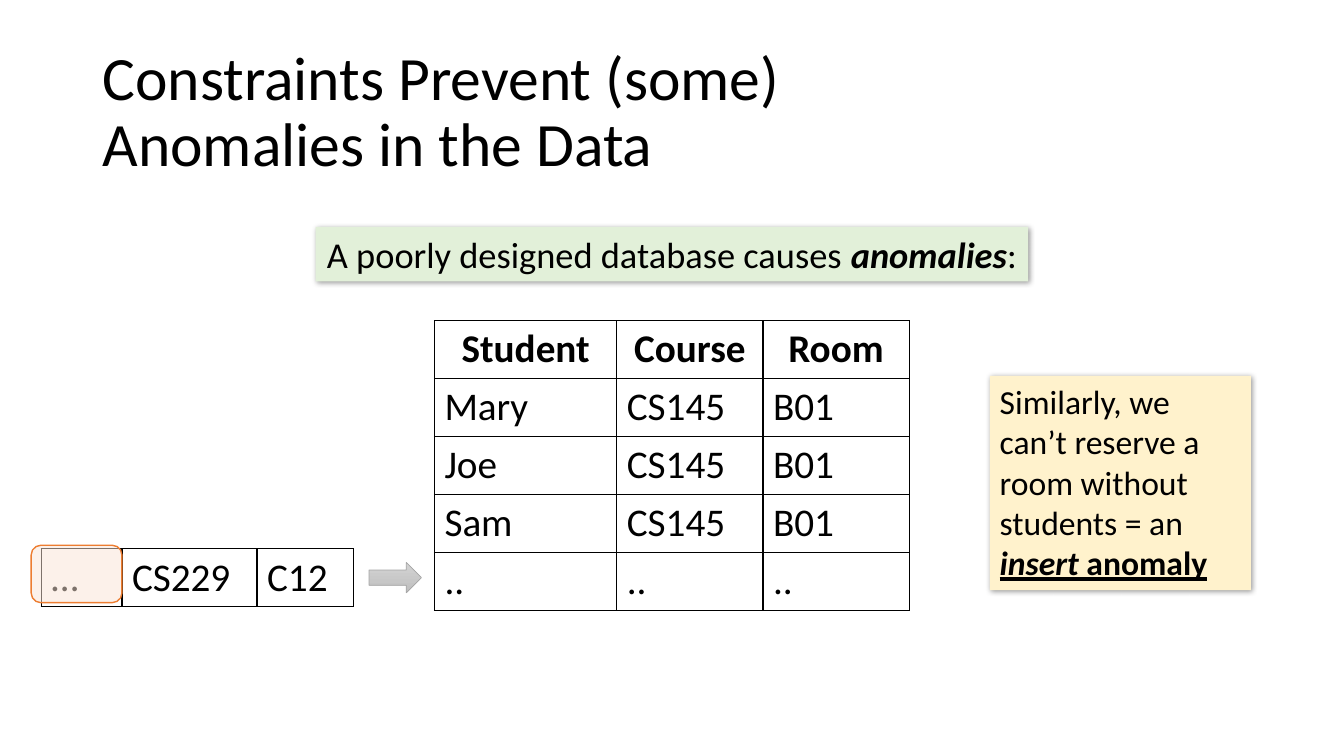
from dataclasses import dataclass

from lxml import etree
from pptx import Presentation
from pptx import util as u
from pptx.dml.color import RGBColor
from pptx.enum import shapes as sh, text as tx
from pptx.oxml import parse_xml
from pptx.oxml.ns import nsdecls, qn


@dataclass(frozen=True)
class Theme:
    font: str = "Calibri"
    ink: str = "000000"
    green: str = "E2F0D9"
    cream: str = "FFF2CC"
    peach: str = "FBE5D6"
    rust: str = "ED7D31"
    gray: str = "A5A5A5"
    light: str = "D2D2D2"
    dark: str = "C0C0C0"
    title: int = 44
    grid: int = 28
    claim: int = 26
    note: int = 24


@dataclass(frozen=True)
class Box:
    left: float
    top: float
    width: float
    height: float

    def place(self) -> tuple:
        return tuple(u.Pt(n) for n in (self.left, self.top, self.width, self.height))


@dataclass(frozen=True)
class Run:
    text: str
    bold: bool = False
    slant: bool = False
    under: bool = False


@dataclass(frozen=True)
class Card:
    box: Box
    fill: str
    size: int
    align: tx.PP_ALIGN
    runs: tuple


@dataclass(frozen=True)
class Grid:
    left: float
    top: float
    cols: tuple
    rows: tuple
    head: bool = False


THEME = Theme()
ROW = 41.4
LEFT, MID = tx.PP_ALIGN.LEFT, tx.PP_ALIGN.CENTER

CARDS = (
    Card(Box(707, 268.5, 186.5, 153), THEME.cream, THEME.note, LEFT, (
        Run("Similarly, we can’t reserve a room without students = an "),
        Run("insert ", bold=True, slant=True, under=True),
        Run("anomaly", bold=True, under=True))),
    Card(Box(225.5, 162, 509, 39), THEME.green, THEME.claim, MID, (
        Run("A poorly designed database causes "),
        Run("anomalies", bold=True, slant=True),
        Run(":"))),
)

GRIDS = (
    Grid(310.3, 229, (130.3, 104.4, 104.4), (
        ("Student", "Course", "Room"),
        *((name, "CS145", "B01") for name in ("Mary", "Joe", "Sam")),
        ("..",) * 3), head=True),
    Grid(29.5, 392, (57.6, 96.5, 69), (("…", "CS229", "C12"),)),
)


def tint(code: str) -> RGBColor:
    return RGBColor.from_string(code)


def style(font, size: int) -> None:
    font.name = THEME.font
    font.size = u.Pt(size)
    font.color.rgb = tint(THEME.ink)


def head(slide) -> None:
    title = slide.shapes.title
    title.left, title.top, title.width, title.height = Box(66, 28.8, 828, 104.4).place()
    frame = title.text_frame
    frame.text = "Constraints Prevent (some) \vAnomalies in the Data"
    frame.auto_size = tx.MSO_AUTO_SIZE.NONE
    frame.vertical_anchor = tx.MSO_ANCHOR.MIDDLE
    para = frame.paragraphs[0]
    para.alignment = LEFT
    para.line_spacing = 0.9
    style(para.font, THEME.title)


def shade(shape) -> None:
    effect = shape._element.spPr.find(qn("a:effectLst"))
    effect.append(parse_xml(
        f'<a:outerShdw {nsdecls("a")} blurRad="{u.Pt(4)}" dist="{u.Pt(1)}" '
        f'dir="2700000" algn="tl" rotWithShape="0"><a:srgbClr val="{THEME.ink}">'
        '<a:alpha val="40000"/></a:srgbClr></a:outerShdw>'))


def form(slide, kind: sh.MSO_SHAPE, box: Box):
    shape = slide.shapes.add_shape(kind, *box.place())
    shape.shadow.inherit = False
    return shape


def edge(shape, code: str, width: float) -> None:
    shape.line.color.rgb = tint(code)
    shape.line.width = u.Pt(width)


def draw_card(slide, card: Card) -> None:
    shape = form(slide, sh.MSO_SHAPE.RECTANGLE, card.box)
    shape.fill.solid()
    shape.fill.fore_color.rgb = tint(card.fill)
    shape.line.fill.background()
    shade(shape)
    frame = shape.text_frame
    frame.word_wrap = True
    frame.auto_size = tx.MSO_AUTO_SIZE.SHAPE_TO_FIT_TEXT
    frame.vertical_anchor = tx.MSO_ANCHOR.TOP
    para = frame.paragraphs[0]
    para.alignment = card.align
    style(para.font, card.size)
    for part in card.runs:
        run = para.add_run()
        run.text = part.text
        style(run.font, card.size)
        run.font.bold = part.bold
        run.font.italic = part.slant
        run.font.underline = part.under


def frame_cell(cell) -> None:
    props = cell._tc.get_or_add_tcPr()
    for side in ("lnL", "lnR", "lnT", "lnB"):
        line = etree.SubElement(props, qn(f"a:{side}"), w=str(u.Pt(1)))
        fill = etree.SubElement(line, qn("a:solidFill"))
        etree.SubElement(fill, qn("a:srgbClr"), val=THEME.ink)


def draw_grid(slide, grid: Grid) -> None:
    box = Box(grid.left, grid.top, sum(grid.cols), ROW * len(grid.rows))
    table = slide.shapes.add_table(len(grid.rows), len(grid.cols), *box.place()).table
    table.first_row = table.horz_banding = False
    for col, width in zip(table.columns, grid.cols):
        col.width = u.Pt(width)
    for r, words in enumerate(grid.rows):
        table.rows[r].height = u.Pt(ROW)
        top = grid.head and r == 0
        for c, word in enumerate(words):
            cell = table.cell(r, c)
            cell.text = word
            frame_cell(cell)
            cell.fill.background()
            para = cell.text_frame.paragraphs[0]
            para.alignment = MID if top else LEFT
            style(para.font, THEME.grid)
            para.font.bold = top


def draw_arrow(slide) -> None:
    arrow = form(slide, sh.MSO_SHAPE.RIGHT_ARROW, Box(263.5, 401.8, 37.5, 21.6))
    arrow.fill.gradient()
    arrow.fill.gradient_angle = 270
    for stop, code in zip(arrow.fill.gradient_stops, (THEME.light, THEME.dark)):
        stop.color.rgb = tint(code)
    edge(arrow, THEME.gray, 0.5)


def draw_mark(slide) -> None:
    mark = form(slide, sh.MSO_SHAPE.ROUNDED_RECTANGLE, Box(22.3, 389.5, 64.8, 41))
    mark.fill.solid()
    mark.fill.fore_color.rgb = tint(THEME.peach)
    color = mark._element.spPr.find(qn("a:solidFill"))[0]
    etree.SubElement(color, qn("a:alpha"), val="50000")
    edge(mark, THEME.rust, 1)


def main() -> None:
    deck = Presentation()
    deck.slide_width, deck.slide_height = u.Pt(960), u.Pt(540)
    slide = deck.slides.add_slide(deck.slide_layouts[5])
    head(slide)
    for card in CARDS:
        draw_card(slide, card)
    for grid in GRIDS:
        draw_grid(slide, grid)
    draw_arrow(slide)
    draw_mark(slide)
    deck.save("out.pptx")


if __name__ == "__main__":
    main()
